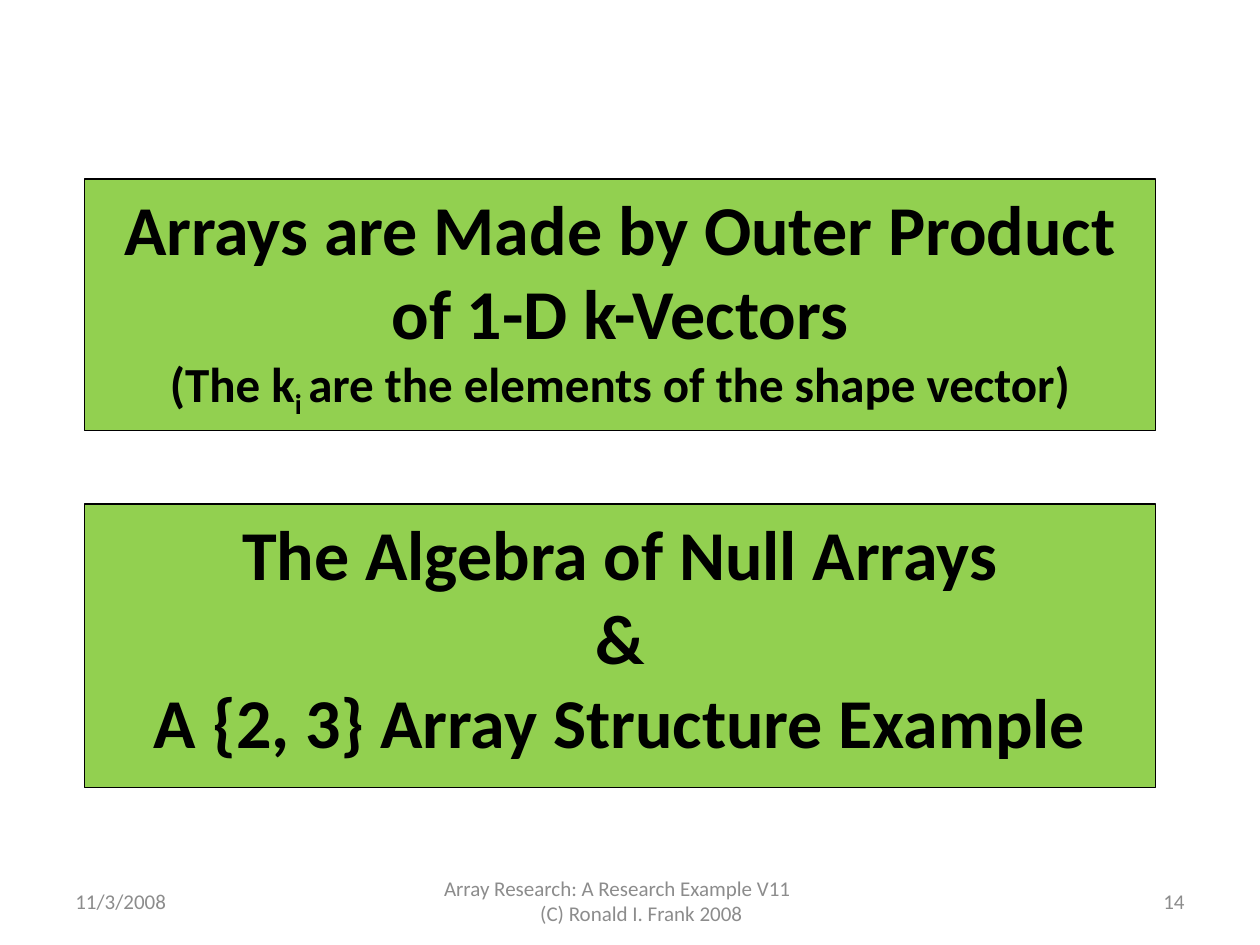
import dataclasses

import pptx
import pptx.dml.color
import pptx.enum.shapes
import pptx.enum.text
import pptx.util

Inches = pptx.util.Inches
ALIGN = pptx.enum.text.PP_ALIGN
ANCHOR = pptx.enum.text.MSO_ANCHOR


@dataclasses.dataclass(frozen=True)
class Theme:
    font: str = "Calibri"
    panel: str = "92D050"
    ink: str = "000000"
    muted: str = "8C8C8C"
    heading: int = 40
    detail: int = 28
    footer: int = 12
    outline: float = 0.75


THEME = Theme()


def apply(target, formats):
    for attribute, value in formats.items():
        setattr(target, attribute, value)


def rgb(code):
    return pptx.dml.color.RGBColor.from_string(code)


def add_run(paragraph, text, size, color, bold=False, baseline=0):
    """Append a run; baseline is a shift in percent, negative for subscript."""
    run = paragraph.add_run()
    run.text = text
    apply(run.font, {"name": THEME.font, "size": pptx.util.Pt(size), "bold": bold})
    run.font.color.rgb = rgb(color)
    if baseline:
        run.font._element.set("baseline", str(baseline * 1000))


def paragraphs_for(frame, lines, alignment):
    """Yield an aligned paragraph of the frame with each line."""
    for index, line in enumerate(lines):
        paragraph = frame.add_paragraph() if index else frame.paragraphs[0]
        paragraph.alignment = alignment
        yield paragraph, line


def add_panel(slide, box, lines):
    """Each line is a list of (text, size, baseline) runs."""
    panel = slide.shapes.add_shape(pptx.enum.shapes.MSO_SHAPE.RECTANGLE, *box)
    panel.shadow.inherit = False
    panel.fill.solid()
    panel.fill.fore_color.rgb = rgb(THEME.panel)
    panel.line.color.rgb = rgb(THEME.ink)
    panel.line.width = pptx.util.Pt(THEME.outline)
    apply(panel.text_frame, {"word_wrap": True, "vertical_anchor": ANCHOR.TOP})
    for paragraph, runs in paragraphs_for(panel.text_frame, lines, ALIGN.CENTER):
        for text, size, baseline in runs:
            add_run(paragraph, text, size, THEME.ink, True, baseline)


def add_footer_text(slide, box, lines, alignment):
    footer = slide.shapes.add_textbox(*box)
    frame = footer.text_frame
    apply(frame, {"word_wrap": True, "vertical_anchor": ANCHOR.MIDDLE})
    for paragraph, text in paragraphs_for(frame, lines, alignment):
        add_run(paragraph, text, THEME.footer, THEME.muted)
    return frame


def add_footer(slide, left, top, width, height):
    side, middle = Inches(2.33), Inches(3.17)
    add_footer_text(slide, (left, top, side, height), ["11/3/2008"], ALIGN.LEFT)
    credit = add_footer_text(
        slide, (left + (width - middle) // 2, top, middle, height),
        ["Array Research: A Research Example V11", "(C) Ronald I. Frank 2008"],
        ALIGN.CENTER)
    # The second credit line sits slightly right of the first.
    apply(credit, {"margin_left": 0, "margin_right": Inches(0.2)})
    credit.paragraphs[1]._p.get_or_add_pPr().set("marL", str(Inches(0.38)))
    add_footer_text(slide, (left + width - side, top, side, height), ["14"], ALIGN.RIGHT)


def main():
    deck = pptx.Presentation()
    apply(deck, {"slide_width": Inches(10), "slide_height": Inches(7.5)})
    slide = deck.slides.add_slide(deck.slide_layouts[6])

    panel_left, panel_width = Inches(0.67), Inches(8.5)
    add_footer(slide, Inches(0.5), Inches(6.95), Inches(9), Inches(0.4))
    add_panel(slide, (panel_left, Inches(1.42), panel_width, Inches(2)), [
        [("Arrays are Made by Outer Product of 1-D k-Vectors", THEME.heading, 0)],
        [("(The k", THEME.detail, 0), ("i ", THEME.detail, -25),
         ("are the elements of the shape vector)", THEME.detail, 0)],
    ])
    add_panel(slide, (panel_left, Inches(4), panel_width, Inches(2.25)), [
        [(text, THEME.heading, 0)] for text in
        ("The Algebra of Null Arrays", "&", "A {2, 3} Array Structure Example")
    ])
    deck.save("out.pptx")


if __name__ == "__main__":
    main()
